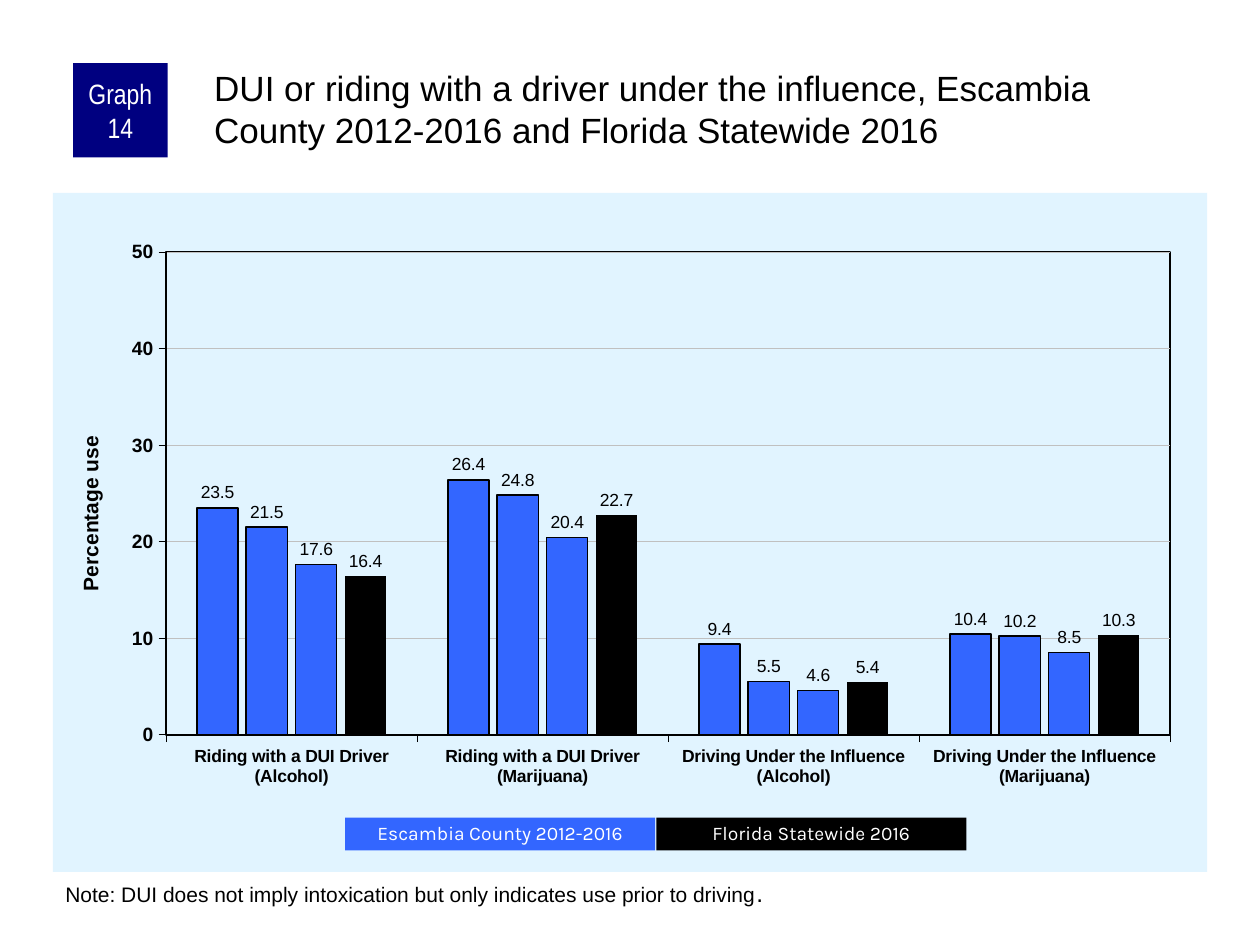
from lxml import etree
from pptx import Presentation
from pptx.chart.data import CategoryChartData
from pptx.dml.color import RGBColor
from pptx.enum.chart import XL_CHART_TYPE as ChartType, XL_LABEL_POSITION as LabelPos
from pptx.enum.chart import XL_TICK_MARK as Tick
from pptx.enum.shapes import MSO_SHAPE as Preset
from pptx.enum.text import MSO_ANCHOR as Anchor, MSO_AUTO_SIZE as AutoSize, PP_ALIGN as Align
from pptx.oxml import parse_xml
from pptx.oxml.ns import nsdecls, qn
from pptx.util import Inches, Pt

THEME = {
    "black": RGBColor(0, 0, 0), "white": RGBColor(255, 255, 255),
    "navy": RGBColor(0, 0, 0x80), "blue": RGBColor(0x33, 0x66, 0xFF),
    "panel": "E1F4FF", "grid": RGBColor(0xC0, 0xC0, 0xC0),
    "font": "Arial", "badge_font": "Arial Narrow", "legend_font": "Karla",
    "title": Pt(20), "badge": Pt(16), "note": Pt(12), "stop": Pt(14),
    "legend": Pt(11), "chart": Pt(11.5), "axis_title": Pt(12),
    "values": Pt(11), "categories": Pt(10), "labels": Pt(10),
}


def style_font(font, size, color="black", name="font", bold=False):
    for key, value in {"size": THEME[size], "name": THEME[name], "bold": bold}.items():
        setattr(font, key, value)
    font.color.rgb = THEME[color]


def add_block(page, text, place, fill, size, name, frame_format):
    block = page.shapes.add_shape(Preset.RECTANGLE, *map(Inches, place))
    block.shadow.inherit = False
    block.fill.solid()
    block.fill.fore_color.rgb = THEME[fill]
    block.line.fill.background()
    frame = block.text_frame
    for key, value in frame_format.items():
        setattr(frame, key, value)
    para = frame.paragraphs[0]
    para.alignment = Align.CENTER
    span = para.add_run()
    span.text = text
    style_font(span.font, size, "white", name)
    return para


deck = Presentation()
deck.slide_width, deck.slide_height = Inches(10), Inches(7.5)
page = deck.slides.add_slide(deck.slide_layouts[5])

# Title
title = page.shapes.title
title_format = {"left": Inches(1.67), "top": Inches(0.5),
                "width": Inches(7.92), "height": Inches(0.83)}
for key, value in title_format.items():
    setattr(title, key, value)
frame_format = {
    "text": "DUI or riding with a driver under the influence, "
            "Escambia County 2012-2016 and Florida Statewide 2016",
    "word_wrap": True, "auto_size": AutoSize.NONE, "vertical_anchor": Anchor.TOP,
    "margin_left": Inches(0.03), "margin_top": Inches(0.03),
    "margin_right": 0, "margin_bottom": 0,
}
for key, value in frame_format.items():
    setattr(title.text_frame, key, value)
para = title.text_frame.paragraphs[0]
para.alignment = Align.LEFT
para.space_before = Pt(0)
style_font(para.runs[0].font, "title")

# Chart data: fill, outline width and values of each series
series_rows = [
    ("blue", 1, (23.5, 26.4, 9.4, 10.4)),
    ("blue", 1, (21.5, 24.8, 5.5, 10.2)),
    ("blue", 0.75, (17.6, 20.4, 4.6, 8.5)),
    ("black", 0, (16.4, 22.7, 5.4, 10.3)),
]
data = CategoryChartData(number_format="0.0")
data.categories = [f"{action} ({drug})"
                   for action in ("Riding with a DUI Driver", "Driving Under the Influence")
                   for drug in ("Alcohol", "Marijuana")]
for number, (fill, width, values) in enumerate(series_rows, 1):
    data.add_series(f"Series {number}", values)
chart = page.shapes.add_chart(ChartType.COLUMN_CLUSTERED, Inches(0.42), Inches(1.53),
                              Inches(9.16), Inches(5.39), data).chart
chart.has_legend = False
chart.has_title = False
style_font(chart.font, "chart")

# Columns and their labels
plot = chart.plots[0]
plot.gap_width, plot.overlap, plot.vary_by_categories = 150, -20, False
for series, (fill, width, values) in zip(plot.series, series_rows):
    series.format.fill.solid()
    series.format.fill.fore_color.rgb = THEME[fill]
    if width:
        series.format.line.color.rgb = THEME["black"]
        series.format.line.width = Pt(width)
    else:
        series.format.line.fill.background()
    labels = series.data_labels
    label_format = {"show_value": True, "number_format": "0.0",
                    "number_format_is_linked": False, "position": LabelPos.OUTSIDE_END}
    for key, value in label_format.items():
        setattr(labels, key, value)
    style_font(labels.font, "labels")

# Axes
value_axis, category_axis = chart.value_axis, chart.category_axis
for axis, size in ((value_axis, "values"), (category_axis, "categories")):
    axis.major_tick_mark, axis.minor_tick_mark = Tick.OUTSIDE, Tick.NONE
    axis.format.line.color.rgb = THEME["black"]
    axis.format.line.width = Pt(0.25)
    style_font(axis.tick_labels.font, size, bold=True)
scale = {"minimum_scale": 0, "maximum_scale": 50, "major_unit": 10,
         "has_major_gridlines": True}
for key, value in scale.items():
    setattr(value_axis, key, value)
value_axis.tick_labels.number_format = "0"
value_axis.tick_labels.number_format_is_linked = False
grid_line = value_axis.major_gridlines.format.line
grid_line.color.rgb = THEME["grid"]
grid_line.width = Pt(0.25)
frame = value_axis.axis_title.text_frame
frame.text = "Percentage use"
style_font(frame.paragraphs[0].runs[0].font, "axis_title", bold=True)

# Plot position, plot border and panel fill
plot_area = chart._chartSpace.chart.plotArea
for old_layout in plot_area.findall(qn("c:layout")):
    plot_area.remove(old_layout)
layout = etree.Element(qn("c:layout"))
manual = etree.SubElement(layout, qn("c:manualLayout"))
for tag, value in (("layoutTarget", "inner"), ("xMode", "edge"), ("yMode", "edge"),
                   ("x", 0.098), ("y", 0.087), ("w", 0.87), ("h", 0.711)):
    etree.SubElement(manual, qn(f"c:{tag}")).set("val", str(value))
plot_area.insert(0, layout)
plot_area.append(parse_xml(
    f'<c:spPr {nsdecls("c", "a")}><a:noFill/><a:ln w="12700"><a:solidFill>'
    f'<a:srgbClr val="{THEME["black"]}"/></a:solidFill></a:ln></c:spPr>'))
chart._chartSpace.chart.addnext(parse_xml(
    f'<c:spPr {nsdecls("c", "a")}><a:solidFill><a:srgbClr val="{THEME["panel"]}"/>'
    '</a:solidFill><a:ln><a:noFill/></a:ln></c:spPr>'))

# Graph number
add_block(page, "Graph 14", (0.58, 0.5, 0.75, 0.75), "navy", "badge", "badge_font",
          {"word_wrap": True, "vertical_anchor": Anchor.MIDDLE,
           "margin_left": Inches(0.05), "margin_right": Inches(0.05),
           "margin_top": 0, "margin_bottom": 0})

# Note
note = page.shapes.add_textbox(Inches(0.42), Inches(6.92), Inches(9.17), Inches(0.34))
note.text_frame.word_wrap = True
note.text_frame.auto_size = AutoSize.SHAPE_TO_FIT_TEXT
para = note.text_frame.paragraphs[0]
for text, size in (("Note: DUI does not imply intoxication but only indicates "
                    "use prior to driving", "note"), (".", "stop")):
    span = para.add_run()
    span.text = text
    style_font(span.font, size)

# Legend
for index, (text, fill) in enumerate((("Escambia County 2012-2016", "blue"),
                                      ("Florida Statewide 2016", "black"))):
    para = add_block(page, text, (2.74 + index * 2.47, 6.49, 2.46, 0.26), fill,
                     "legend", "legend_font",
                     {"word_wrap": True, "vertical_anchor": Anchor.MIDDLE})
    para.line_spacing = 0.9

deck.save("out.pptx")
